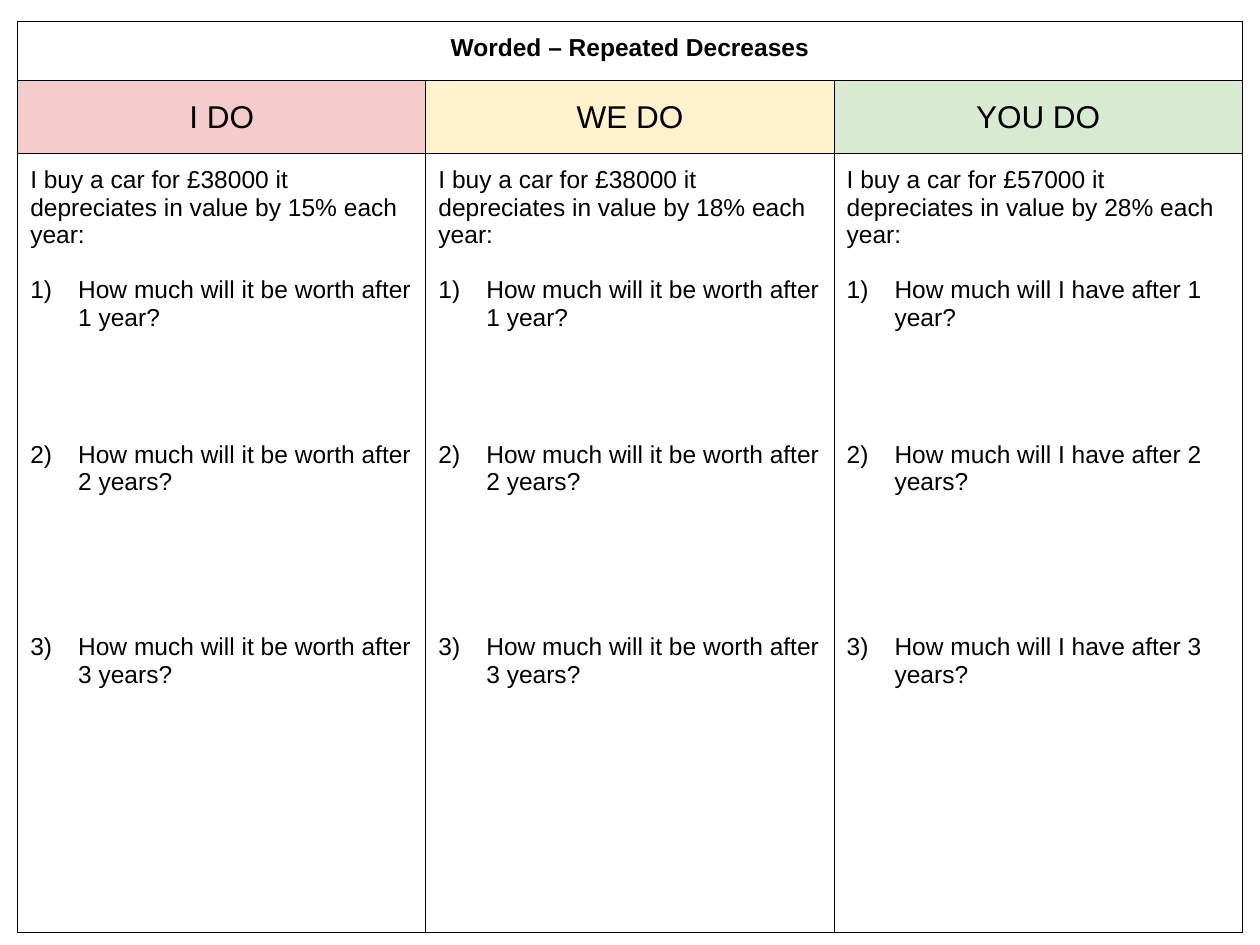
import pptx
import pptx.util
import pptx.dml.color
import pptx.enum.text
import pptx.oxml.ns
import lxml.etree

Inches, Pt = pptx.util.Inches, pptx.util.Pt
CENTER = pptx.enum.text.PP_ALIGN.CENTER
MIDDLE = pptx.enum.text.MSO_ANCHOR.MIDDLE
qn = pptx.oxml.ns.qn

COLORS = {"ink": "000000", "pink": "F4CCCC", "yellow": "FFF2CC", "green": "D9EAD3"}
HEADING = "Worded – Repeated Decreases"
COLUMNS = [
    ("I DO", "pink", "£38000", "15%", "it be worth"),
    ("WE DO", "yellow", "£38000", "18%", "it be worth"),
    ("YOU DO", "green", "£57000", "28%", "I have"),
]
PERIODS = ["1 year", "2 years", "3 years"]
GAPS = [15.7, 62.6, 78.5]
ROW_HEIGHTS = [0.47, 0.58, 6.18]
COLUMN_WIDTH = 3.24
INDENT = 0.38


def rgb(name):
    return pptx.dml.color.RGBColor.from_string(COLORS[name])


def add_borders(cell):
    properties = cell._tc.get_or_add_tcPr()
    for position, side in enumerate(("lnL", "lnR", "lnT", "lnB")):
        line = lxml.etree.Element(qn(f"a:{side}"), w=str(Pt(0.75)))
        fill = lxml.etree.SubElement(line, qn("a:solidFill"))
        lxml.etree.SubElement(fill, qn("a:srgbClr"), val=COLORS["ink"])
        properties.insert(position, line)


def format_text(paragraph, size, bold=False):
    for run in paragraph.runs:
        run.font.name = "Arial"
        run.font.size = Pt(size)
        run.font.bold = bold
        run.font.color.rgb = rgb("ink")


def write_label(cell, label, size, bold=False):
    cell.text_frame.text = label
    paragraph = cell.text_frame.paragraphs[0]
    paragraph.alignment = CENTER
    format_text(paragraph, size, bold)


def number(paragraph):
    properties = paragraph._p.get_or_add_pPr()
    properties.set("marL", str(Inches(INDENT)))
    properties.set("indent", str(-Inches(INDENT)))
    color = lxml.etree.SubElement(properties, qn("a:buClr"))
    lxml.etree.SubElement(color, qn("a:srgbClr"), val=COLORS["ink"])
    lxml.etree.SubElement(properties, qn("a:buFont"), typeface="Arial")
    lxml.etree.SubElement(properties, qn("a:buAutoNum"), type="arabicParenR")


def write_questions(cell, price, rate, outcome):
    frame = cell.text_frame
    frame.text = f"I buy a car for {price} it depreciates in value by {rate} each year:"
    format_text(frame.paragraphs[0], 14)
    for period, gap in zip(PERIODS, GAPS):
        question = frame.add_paragraph()
        question.text = f"How much will {outcome} after {period}?"
        question.space_before = Pt(gap)
        number(question)
        format_text(question, 14)


def main():
    presentation = pptx.Presentation()
    presentation.slide_width, presentation.slide_height = Inches(10), Inches(7.5)
    slide = presentation.slides.add_slide(presentation.slide_layouts[6])
    lesson = slide.shapes.add_table(
        len(ROW_HEIGHTS), len(COLUMNS), Inches(0.14), Inches(0.17),
        Inches(COLUMN_WIDTH * len(COLUMNS)), Inches(sum(ROW_HEIGHTS)),
    ).table
    lesson.first_row = lesson.horz_banding = False
    for row, height in zip(lesson.rows, ROW_HEIGHTS):
        row.height = Inches(height)
    for column in lesson.columns:
        column.width = Inches(COLUMN_WIDTH)

    for cell in lesson.iter_cells():
        cell.margin_left = cell.margin_right = Inches(0.1)
        cell.margin_top = cell.margin_bottom = Inches(0.1)
        cell.fill.background()
        add_borders(cell)

    lesson.cell(0, 0).merge(lesson.cell(0, len(COLUMNS) - 1))
    write_label(lesson.cell(0, 0), HEADING, 14, bold=True)
    for index, (stage, color, price, rate, outcome) in enumerate(COLUMNS):
        stage_cell = lesson.cell(1, index)
        stage_cell.fill.solid()
        stage_cell.fill.fore_color.rgb = rgb(color)
        stage_cell.vertical_anchor = MIDDLE
        write_label(stage_cell, stage, 18)
        write_questions(lesson.cell(2, index), price, rate, outcome)

    presentation.save("out.pptx")


if __name__ == "__main__":
    main()
